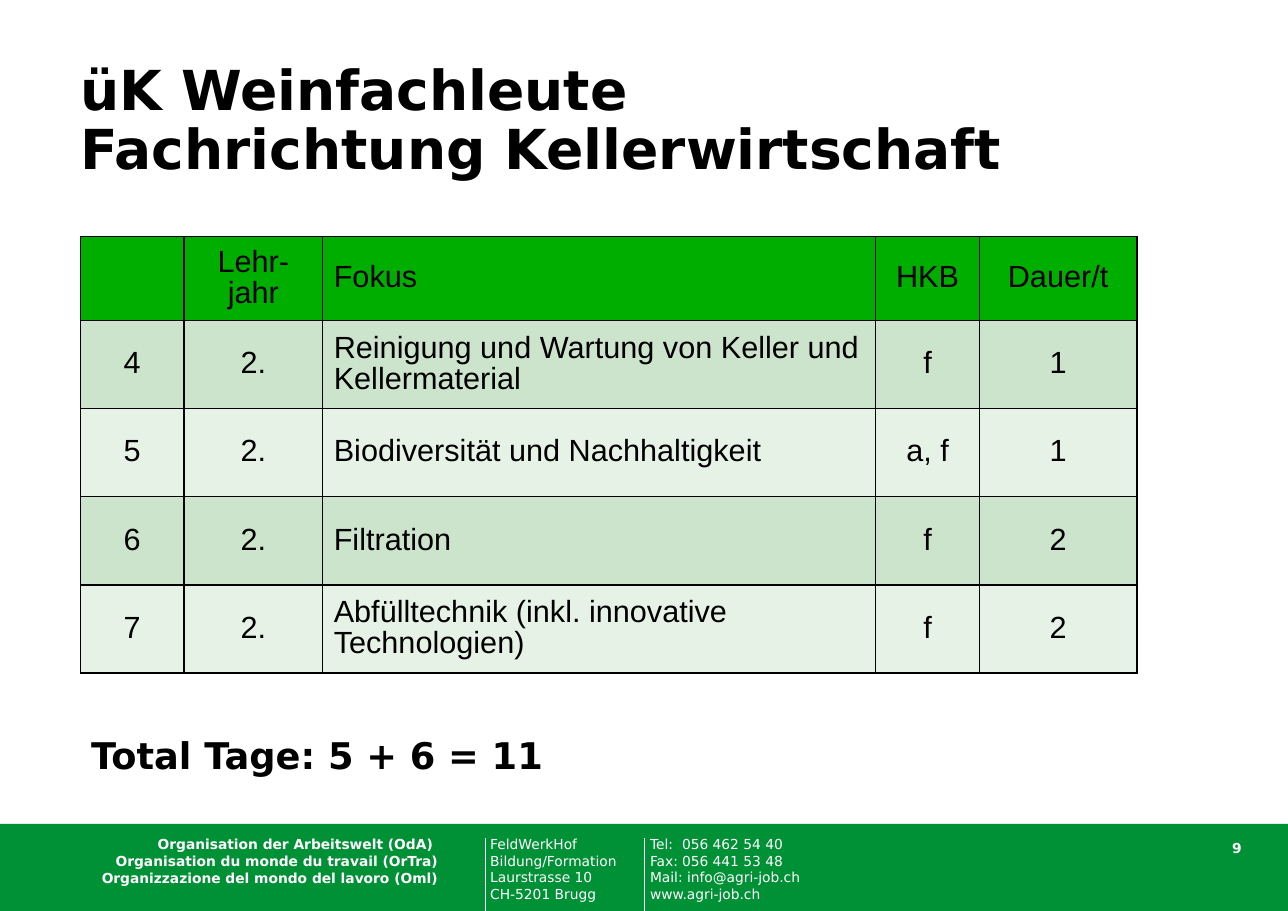
from dataclasses import dataclass

from lxml import etree
from pptx import Presentation
from pptx import util as u
from pptx.dml.color import RGBColor
from pptx.enum import shapes, text
from pptx.oxml import ns

PX = 9144


@dataclass(frozen=True)
class Theme:
    ink: str = "000000"
    paper: str = "FFFFFF"
    footer: str = "009036"
    header: str = "00AE00"
    bands: tuple = ("CCE3CC", "E7F2E7")
    heading_font: str = "DejaVu Sans"
    table_font: str = "Arial"
    title_size: int = 36
    total_size: int = 24
    table_size: int = 20
    footer_size: int = 9


class Page:
    """Draws styled elements on one slide, with lengths in px."""

    def __init__(self, slide, theme):
        self.slide = slide
        self.theme = theme

    def style(self, paragraph, size, color, font, bold=False):
        for run in paragraph.runs:
            run.font.size = u.Pt(size)
            run.font.bold = bold
            run.font.name = font
            run.font.color.rgb = RGBColor.from_string(color)

    def band(self, *box):
        band = self.slide.shapes.add_shape(
            shapes.MSO_SHAPE.RECTANGLE, *(v * PX for v in box))
        band.shadow.inherit = False
        band.fill.solid()
        band.fill.fore_color.rgb = RGBColor.from_string(self.theme.footer)
        band.line.fill.background()

    def divider(self, x, top, bottom):
        divider = self.slide.shapes.add_connector(
            shapes.MSO_CONNECTOR.STRAIGHT, x * PX, top * PX, x * PX, bottom * PX)
        divider.line.color.rgb = RGBColor.from_string(self.theme.paper)
        divider.line.width = u.Pt(0.75)
        etree.SubElement(divider._element.spPr, ns.qn("a:effectLst"))

    def label(self, words, box, size, color, bold=False, align=None,
              spacing=None, inset=(0, 0), tab=None):
        frame = self.slide.shapes.add_textbox(*(v * PX for v in box)).text_frame
        frame.word_wrap = True
        frame.margin_left = frame.margin_right = inset[0] * PX
        frame.margin_top = frame.margin_bottom = inset[1] * PX
        paragraph = frame.paragraphs[0]
        paragraph.text = words
        if tab:
            stops = etree.SubElement(paragraph._p.get_or_add_pPr(), ns.qn("a:tabLst"))
            etree.SubElement(stops, ns.qn("a:tab"), pos=str(tab * PX), algn="l")
        paragraph.alignment = align
        paragraph.line_spacing = spacing
        self.style(paragraph, size, color, self.theme.heading_font, bold)

    def footer_text(self, words, box, **options):
        self.label(words, box, self.theme.footer_size, self.theme.paper, **options)

    def borders(self, cell):
        props = cell._tc.get_or_add_tcPr()
        for side in ("lnL", "lnR", "lnT", "lnB"):
            edge = etree.SubElement(props, ns.qn(f"a:{side}"), w=str(u.Pt(1)))
            fill = etree.SubElement(edge, ns.qn("a:solidFill"))
            etree.SubElement(fill, ns.qn("a:srgbClr"), val=self.theme.ink)

    def table(self, rows, left, top, widths, heights, left_column):
        theme = self.theme
        grid = self.slide.shapes.add_table(
            len(rows), len(widths), left * PX, top * PX,
            sum(widths) * PX, sum(heights) * PX).table
        for column, width in zip(grid.columns, widths):
            column.width = width * PX
        for r, (row, height) in enumerate(zip(rows, heights)):
            grid.rows[r].height = height * PX
            for c, words in enumerate(row):
                cell = grid.cell(r, c)
                self.borders(cell)
                cell.fill.solid()
                cell.fill.fore_color.rgb = RGBColor.from_string(
                    theme.bands[(r - 1) % 2] if r else theme.header)
                cell.vertical_anchor = text.MSO_ANCHOR.MIDDLE
                paragraph = cell.text_frame.paragraphs[0]
                paragraph.text = words
                paragraph.line_spacing = 0.9
                if c != left_column:
                    paragraph.alignment = text.PP_ALIGN.CENTER
                self.style(paragraph, theme.table_size, theme.ink, theme.table_font)


def main():
    deck = Presentation()
    deck.slide_width, deck.slide_height = 1169 * PX, 827 * PX
    theme = Theme()
    page = Page(deck.slides.add_slide(deck.slide_layouts[6]), theme)

    page.band(0, 748, 1169, 79)
    for x in (441, 585):
        page.divider(x, 761, 827)
    page.footer_text(
        "FeldWerkHof\nBildung/Formation\nLaurstrasse 10\nCH-5201 Brugg",
        (445, 759, 120, 60))
    page.footer_text(
        "Tel:\t056 462 54 40\nFax:\t056 441 53 48\nMail: info@agri-job.ch\nwww.agri-job.ch",
        (590, 759, 145, 60), tab=29)
    page.footer_text(
        "Organisation der Arbeitswelt (OdA) \n"
        "Organisation du monde du travail (OrTra)\n"
        "Organizzazione del mondo del lavoro (Oml)",
        (60, 759, 337, 45), bold=True, align=text.PP_ALIGN.RIGHT)
    page.footer_text("9", (1081, 759, 57, 24), bold=True,
                     align=text.PP_ALIGN.RIGHT, spacing=0.9, inset=(11, 5))

    page.label("üK Weinfachleute\nFachrichtung Kellerwirtschaft",
               (73, 58, 866, 110), theme.title_size, theme.ink,
               bold=True, spacing=u.Pt(38))
    courses = [
        ("", "Lehr-jahr", "Fokus", "HKB", "Dauer/t"),
        ("4", "2.", "Reinigung und Wartung von Keller und Kellermaterial", "f", "1"),
        ("5", "2.", "Biodiversität und Nachhaltigkeit", "a, f", "1"),
        ("6", "2.", "Filtration", "f", "2"),
        ("7", "2.", "Abfülltechnik (inkl. innovative Technologien)", "f", "2"),
    ]
    page.table(courses, 73, 215, (94, 126, 502, 94, 143),
               [76] + [80] * 4, left_column=2)
    page.label("Total Tage: 5 + 6 = 11", (73, 665, 1000, 46),
               theme.total_size, theme.ink, bold=True, spacing=0.9, inset=(10, 5))

    deck.save("out.pptx")


if __name__ == "__main__":
    main()
